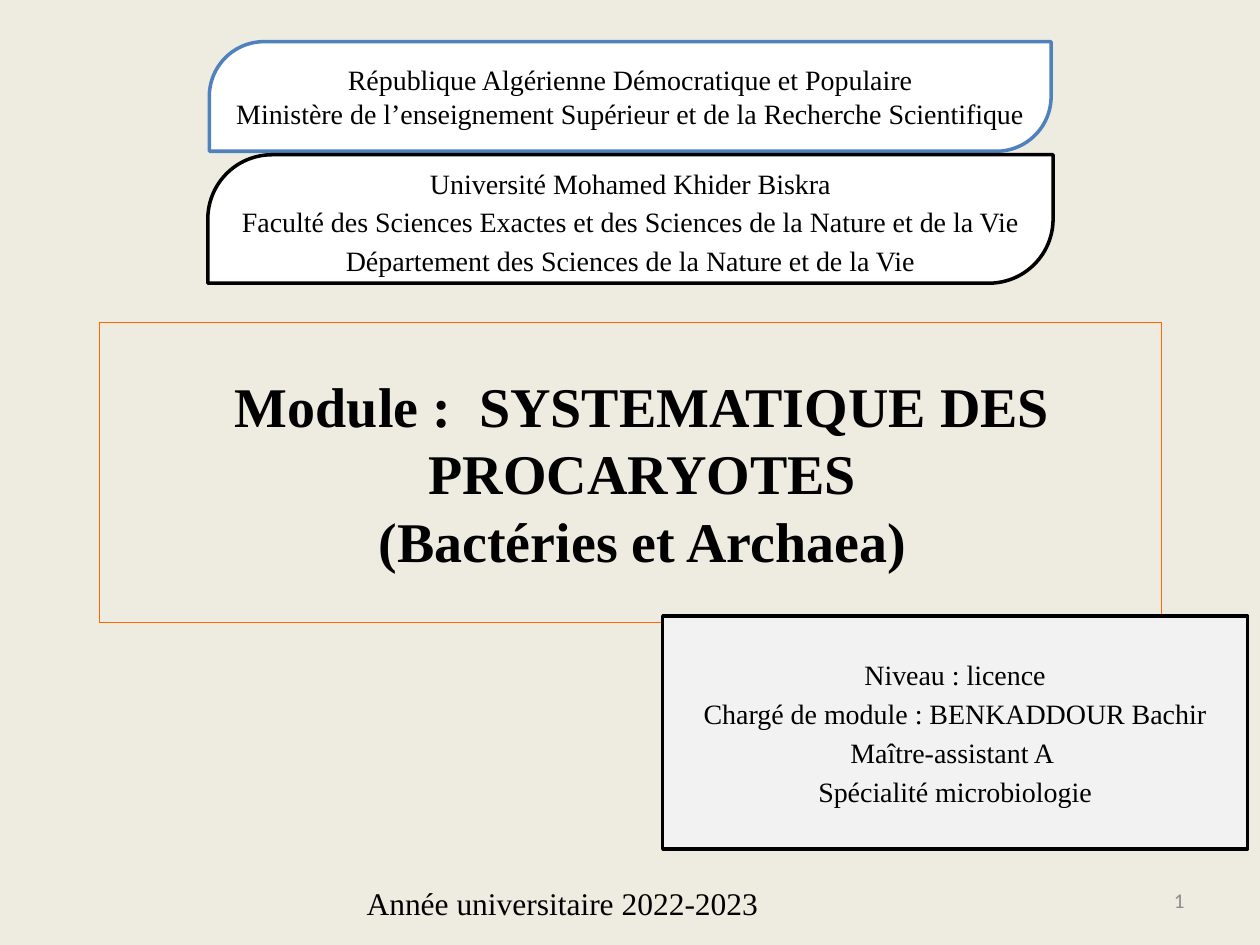
import pptx
import pptx.dml.color
import pptx.enum.shapes
import pptx.enum.text
import pptx.util
from dataclasses import dataclass

Cm = pptx.util.Cm
Pt = pptx.util.Pt
Shape = pptx.enum.shapes.MSO_SHAPE
Align = pptx.enum.text.PP_ALIGN
Anchor = pptx.enum.text.MSO_ANCHOR


@dataclass(frozen=True)
class Theme:
    serif: str = "Times New Roman"
    sans: str = "Calibri"
    background: str = "EEECE1"
    white: str = "FFFFFF"
    pale: str = "F2F2F2"
    ink: str = "000000"
    grey: str = "8C8C8C"
    blue: str = "4F81BD"
    orange: str = "FF6600"
    title_size: int = 32
    body_size: int = 16
    year_size: int = 18
    number_size: int = 12
    thin: float = 0.75
    thick: float = 2


THEME = Theme()


def rgb(value):
    return pptx.dml.color.RGBColor.from_string(value)


def write_lines(box, lines, size, font=THEME.serif, color=THEME.ink, bold=False,
                align=Align.CENTER, space_before=0, line_spacing=None):
    """Fill the box with one paragraph per line, all in the same style."""
    frame = box.text_frame
    for index, line in enumerate(lines):
        para = frame.add_paragraph() if index else frame.paragraphs[0]
        para.text = line
        para.alignment = align
        para.space_before = Pt(space_before)
        para.line_spacing = line_spacing
        para.font.name = font
        para.font.size = Pt(size)
        para.font.bold = bold
        para.font.color.rgb = rgb(color)


def add_panel(page, kind, bounds, line, width, fill=None, wrap=False):
    """Add an outlined shape with narrow margins and middle-anchored text."""
    panel = page.shapes.add_shape(kind, *map(Cm, bounds))
    panel.shadow.inherit = False
    if kind == Shape.ROUND_2_DIAG_RECTANGLE:
        panel.adjustments[0] = 0.5
    if fill:
        panel.fill.solid()
        panel.fill.fore_color.rgb = rgb(fill)
    else:
        panel.fill.background()
    panel.line.color.rgb = rgb(line)
    panel.line.width = Pt(width)
    frame = panel.text_frame
    frame.word_wrap = wrap
    frame.vertical_anchor = Anchor.MIDDLE
    frame.margin_left = frame.margin_right = Cm(0.1)
    frame.margin_top = frame.margin_bottom = Cm(0.1)
    return panel


def add_label(page, bounds, text, anchor, wrap, **style):
    label = page.shapes.add_textbox(*map(Cm, bounds))
    label.text_frame.word_wrap = wrap
    label.text_frame.vertical_anchor = anchor
    write_lines(label, [text], **style)


def add_title(page):
    title = add_panel(page, Shape.RECTANGLE, (2, 6.5, 21.41, 6.05),
                      THEME.orange, THEME.thin, wrap=True)
    title.text_frame.margin_left = Cm(0.6)
    write_lines(title, ["Module :  SYSTEMATIQUE DES PROCARYOTES\v(Bactéries et Archaea)"],
                THEME.title_size, bold=True, space_before=6.4)


def add_teacher(page):
    teacher = add_panel(page, Shape.RECTANGLE, (13.36, 12.42, 11.79, 4.7),
                        THEME.ink, THEME.thick, THEME.pale)
    write_lines(teacher, ["Niveau : licence",
                          "Chargé de module : BENKADDOUR Bachir",
                          "Maître-assistant A ",
                          "Spécialité microbiologie"],
                THEME.body_size, space_before=3.2)


def add_institutions(page):
    ministry = add_panel(page, Shape.ROUND_2_DIAG_RECTANGLE, (4.22, 0.84, 16.97, 2.21),
                         THEME.blue, THEME.thick, THEME.white)
    write_lines(ministry,
                ["République Algérienne Démocratique et Populaire",
                 "Ministère de l’enseignement Supérieur et de la Recherche Scientifique"],
                THEME.body_size)
    university = add_panel(page, Shape.ROUND_2_DIAG_RECTANGLE, (4.19, 3.12, 17.04, 2.59),
                           THEME.ink, THEME.thick, THEME.white)
    write_lines(university,
                ["Université Mohamed Khider Biskra",
                 "Faculté des Sciences Exactes et des Sciences de la Nature et de la Vie",
                 "Département des Sciences de la Nature et de la Vie"],
                THEME.body_size, line_spacing=1.15)


def main():
    deck = pptx.Presentation()
    deck.slide_width, deck.slide_height = Cm(25.4), Cm(19.05)
    page = deck.slides.add_slide(deck.slide_layouts[6])
    page.background.fill.solid()
    page.background.fill.fore_color.rgb = rgb(THEME.background)

    add_title(page)
    add_teacher(page)
    add_institutions(page)
    add_label(page, (7.14, 17.7, 8.48, 1.02), "Année universitaire 2022-2023",
              Anchor.TOP, False, size=THEME.year_size, align=Align.LEFT)
    add_label(page, (18.2, 17.65, 5.93, 1.01), "1", Anchor.MIDDLE, True,
              size=THEME.number_size, font=THEME.sans, color=THEME.grey,
              align=Align.RIGHT)
    deck.save("out.pptx")


if __name__ == "__main__":
    main()
